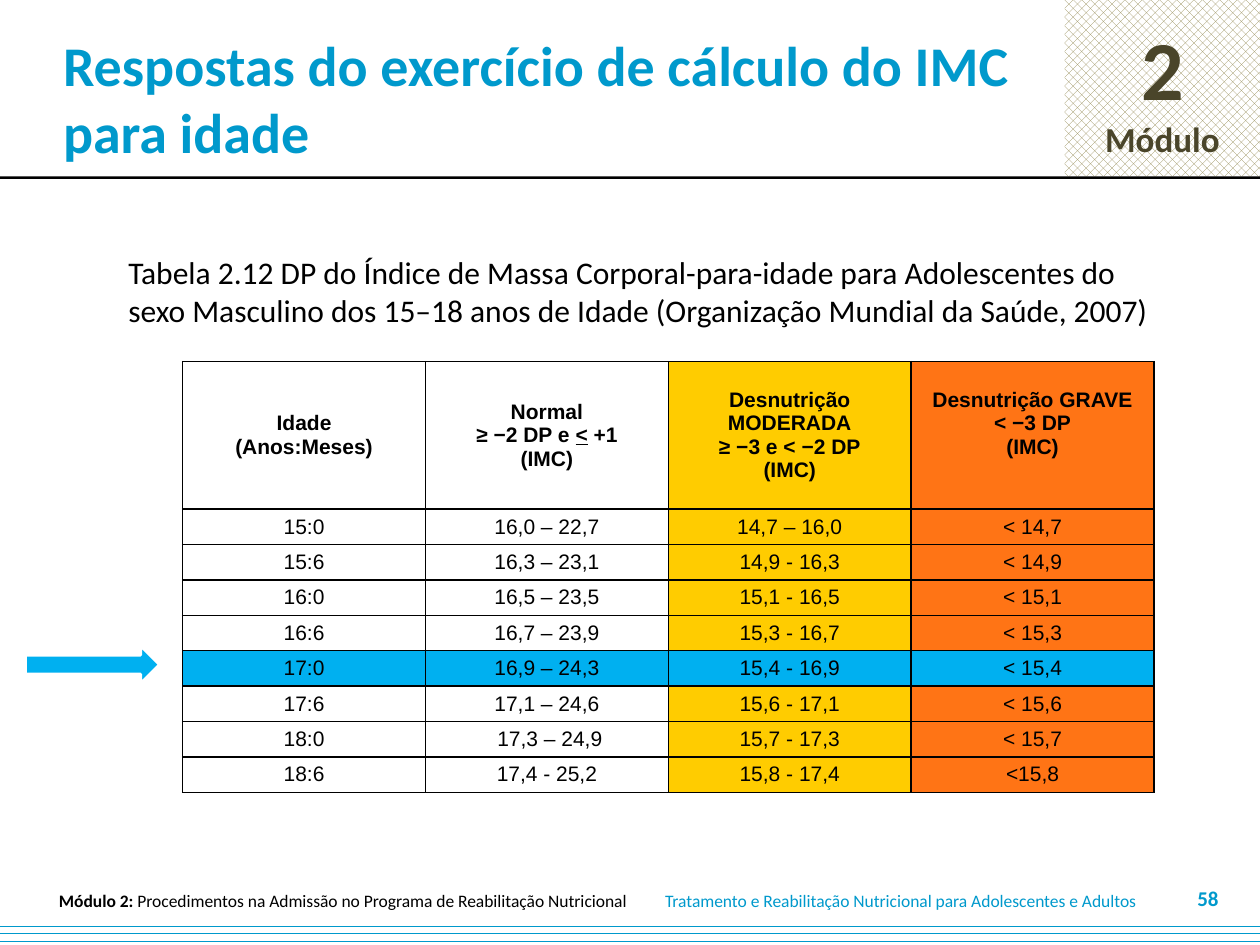
from lxml import etree
from pptx import Presentation
from pptx.dml.color import RGBColor
from pptx.enum.dml import MSO_PATTERN
from pptx.enum.shapes import MSO_SHAPE
from pptx.enum.text import MSO_ANCHOR, PP_ALIGN
from pptx.oxml.ns import qn
from pptx.util import Inches, Pt

LEFT, CENTER, RIGHT = PP_ALIGN.LEFT, PP_ALIGN.CENTER, PP_ALIGN.RIGHT
TOP, MIDDLE = MSO_ANCHOR.TOP, MSO_ANCHOR.MIDDLE
RECTANGLE, RIGHT_ARROW = MSO_SHAPE.RECTANGLE, MSO_SHAPE.RIGHT_ARROW
DOTS, DASHES = MSO_PATTERN.PERCENT_50, MSO_PATTERN.DASHED_HORIZONTAL

BLACK, WHITE, BLUE = "000000", "FFFFFF", "0099CC"
KHAKI, DARK_KHAKI = "948A54", "4A452A"
YELLOW, ORANGE, HIGHLIGHT = "FFCC00", "FF7415", "00B0F0"

COLUMN_FILLS = [None, None, YELLOW, ORANGE]
HEADERS = [
    ["Idade", "(Anos:Meses)"],
    ["Normal", "≥ −2 DP e |<| +1", "(IMC)"],  # bars enclose underlined text
    ["Desnutrição MODERADA", "≥ −3 e < −2 DP", "(IMC)"],
    ["Desnutrição GRAVE", "< −3 DP", "(IMC)"],
]
BMI_ROWS = [
    ["15:0", "16,0 – 22,7", "14,7 – 16,0", "< 14,7"],
    ["15:6", "16,3 – 23,1", "14,9 - 16,3", "< 14,9"],
    ["16:0", "16,5 – 23,5", "15,1 - 16,5", "< 15,1"],
    ["16:6", "16,7 – 23,9", "15,3 - 16,7", "< 15,3"],
    ["17:0", "16,9 – 24,3", "15,4 - 16,9", "< 15,4"],
    ["17:6", "17,1 – 24,6", "15,6 - 17,1", "< 15,6"],
    ["18:0", " 17,3 – 24,9", "15,7 - 17,3", "< 15,7"],
    ["18:6", "17,4 - 25,2", "15,8 - 17,4", "<15,8"],
]
ANSWER_AGE = "17:0"


def rgb(value):
    return RGBColor.from_string(value)


def style(paragraph, size, color=BLACK, bold=False, align=LEFT, font="Calibri"):
    paragraph.alignment = align
    paragraph.font.name = font
    paragraph.font.size = Pt(size)
    paragraph.font.bold = bold
    paragraph.font.color.rgb = rgb(color)


def add_block(slide, kind, box, fill, pattern=None):
    block = slide.shapes.add_shape(kind, *map(Inches, box))
    block.shadow.inherit = False
    block.line.fill.background()
    if pattern is None:
        block.fill.solid()
    else:
        block.fill.patterned()
        block.fill.pattern = pattern
        block.fill.back_color.rgb = rgb(WHITE)
    block.fill.fore_color.rgb = rgb(fill)
    return block


def add_text(slide, box, text, size, anchor=MIDDLE, wrap=True, **look):
    frame = slide.shapes.add_textbox(*map(Inches, box)).text_frame
    frame.word_wrap = wrap
    frame.vertical_anchor = anchor
    frame.text = text
    style(frame.paragraphs[0], size, **look)
    return frame


def add_header(slide, title_box, module_box, rule_box):
    title = add_text(slide, title_box,
                     "Respostas do exercício de cálculo do IMC para idade",
                     32, color=BLUE, bold=True)
    title.margin_left = Inches(0.5)

    module = add_block(slide, RECTANGLE, module_box, KHAKI, DOTS).text_frame
    module.vertical_anchor = MIDDLE
    module.text = "2\nMódulo"
    for paragraph, size in zip(module.paragraphs, (48, 20)):
        style(paragraph, size, DARK_KHAKI, True, CENTER)

    add_block(slide, RECTANGLE, rule_box, BLACK)


def set_borders(cell, color=BLACK, width=1):
    properties = cell._tc.get_or_add_tcPr()
    for index, side in enumerate(("lnL", "lnR", "lnT", "lnB")):
        border = etree.Element(qn(f"a:{side}"), w=str(Pt(width)))
        solid = etree.SubElement(border, qn("a:solidFill"))
        etree.SubElement(solid, qn("a:srgbClr"), val=color)
        properties.insert(index, border)


def fill_cell(cell, lines, fill, bold=False):
    cell.vertical_anchor = MIDDLE
    cell.margin_left = cell.margin_right = Inches(0.04)
    cell.margin_top = cell.margin_bottom = Inches(0.04)
    if fill:
        cell.fill.solid()
        cell.fill.fore_color.rgb = rgb(fill)
    else:
        cell.fill.background()
    set_borders(cell)

    frame = cell.text_frame
    for index, line in enumerate(lines):
        paragraph = frame.add_paragraph() if index else frame.paragraphs[0]
        style(paragraph, 12, bold=bold, align=CENTER, font="Arial")
        for position, part in enumerate(line.split("|")):
            run = paragraph.add_run()
            run.text = part
            if position % 2:
                run.font.underline = True


def add_bmi_table(slide, box, header_height):
    row_count, column_count = len(BMI_ROWS) + 1, len(HEADERS)
    table = slide.shapes.add_table(row_count, column_count, *map(Inches, box)).table
    table.first_row = table.horz_banding = False
    _, _, width, height = box
    for column in table.columns:
        column.width = Inches(width / column_count)
    for row in table.rows:
        row.height = Inches((height - header_height) / len(BMI_ROWS))
    table.rows[0].height = Inches(header_height)

    for column, lines in enumerate(HEADERS):
        fill_cell(table.cell(0, column), lines, COLUMN_FILLS[column], bold=True)
    # The last heading sits one line higher than the centre.
    table.cell(0, column_count - 1).margin_bottom = Inches(0.23)

    for row, values in enumerate(BMI_ROWS, start=1):
        for column, value in enumerate(values):
            fill = HIGHLIGHT if values[0] == ANSWER_AGE else COLUMN_FILLS[column]
            fill_cell(table.cell(row, column), [value], fill)


def add_answer_arrow(slide, box):
    arrow = add_block(slide, RIGHT_ARROW, box, HIGHLIGHT)
    arrow.line.color.rgb = rgb(WHITE)
    arrow.line.width = Pt(2)


def add_footer(slide, module_box, course_box, number_box, stripes_box):
    add_block(slide, RECTANGLE, stripes_box, BLUE, DASHES)
    add_text(slide, course_box,
             "Tratamento e Reabilitação Nutricional para Adolescentes e Adultos",
             10, wrap=False, color=BLUE)
    module = add_text(slide, module_box, "Módulo 2: ", 10, wrap=False, align=CENTER)
    label = module.paragraphs[0]
    label.runs[0].font.bold = True
    label.add_run().text = ("Procedimentos na Admissão no Programa de "
                            "Reabilitação Nutricional")
    add_text(slide, number_box, "58", 12, color=BLUE, bold=True, align=RIGHT)


def main():
    deck = Presentation()
    deck.slide_width, deck.slide_height = Inches(10), Inches(7.5)
    slide = deck.slides.add_slide(deck.slide_layouts[6])

    add_header(slide, title_box=(0, 0, 8.58, 1.55),
               module_box=(8.45, 0, 1.55, 1.4), rule_box=(0, 1.4, 10, 0.02))
    add_text(slide, (0.92, 1.96, 8.34, 0.92),
             "Tabela 2.12 DP do Índice de Massa Corporal-para-idade para "
             "Adolescentes do sexo Masculino dos 15–18 anos de Idade "
             "(Organização Mundial da Saúde, 2007)", 18, anchor=TOP)
    add_answer_arrow(slide, (0.2, 5.12, 1.07, 0.31))
    add_bmi_table(slide, (1.45, 2.87, 7.71, 3.42), header_height=1.17)
    add_footer(slide, module_box=(0.29, 7.05, 4.86, 0.2),
               course_box=(5.18, 7.05, 4.05, 0.2),
               number_box=(9.27, 7, 0.5, 0.25), stripes_box=(0, 7.29, 10, 0.21))
    deck.save("out.pptx")


if __name__ == "__main__":
    main()
